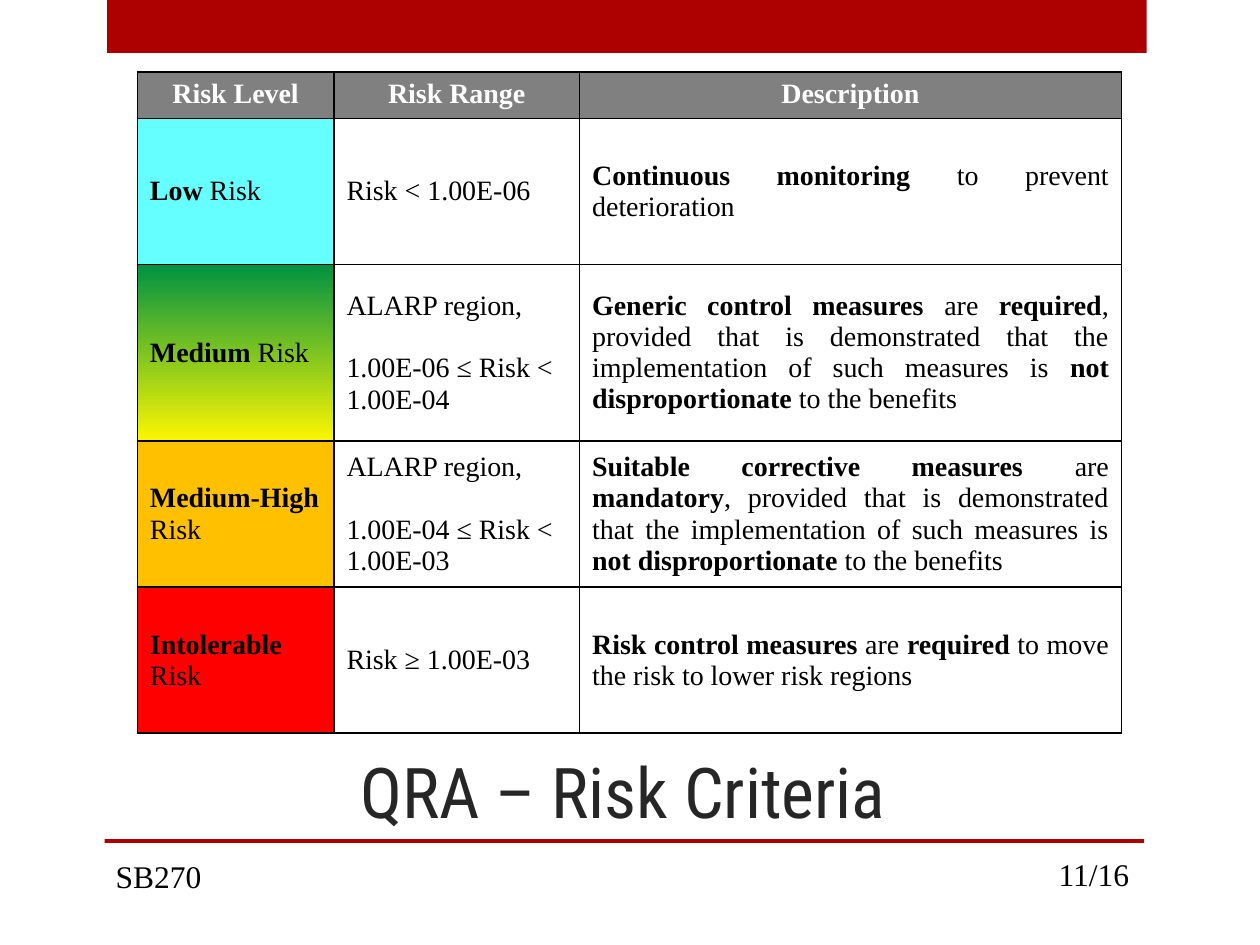
"""Build the risk criteria slide with its table of risk levels."""
from dataclasses import dataclass

import lxml.etree
import pptx
import pptx.dml.color
import pptx.enum.shapes
import pptx.enum.text
import pptx.oxml.ns
import pptx.util
from pptx.util import Inches

COLORS = {
    "accent": "AD0101", "black": "000000", "white": "FFFFFF", "title": "262626",
    "header": "808080", "low": "66FFFF", "medium_top": "009242",
    "medium_bottom": "FCF600", "medium_high": "FFC000", "intolerable": "FF0000",
}
SERIF = "Times New Roman"
ALIGN = pptx.enum.text.PP_ALIGN
ANCHOR = pptx.enum.text.MSO_ANCHOR
COLUMN_WIDTHS = (1.56, 1.95, 4.3)
HEADER_HEIGHT = 0.37
HEADINGS = ("Risk Level", "Risk Range", "Description")


@dataclass(frozen=True)
class RiskLevel:
    """One table row; double asterisks enclose bold words."""
    name: str
    limits: tuple[str, ...]
    description: str
    fills: tuple[str, ...]
    height: float = 1.16


@dataclass(frozen=True)
class Label:
    """A single-line text box."""
    text: str
    box: tuple[float, float, float, float]
    size: int
    font: str = SERIF
    color: str = "black"
    align: ALIGN = ALIGN.LEFT
    anchor: ANCHOR = ANCHOR.TOP


RISK_LEVELS = (
    RiskLevel("**Low** Risk", ("Risk < 1.00E-06",),
              "**Continuous monitoring **to prevent deterioration", ("low",)),
    RiskLevel("**Medium** Risk", ("ALARP region,", "1.00E-06 ≤ Risk < 1.00E-04"),
              "**Generic control measures** are **required**, provided that is demonstrated "
              "that the implementation of such measures is **not disproportionate **"
              "to the benefits", ("medium_top", "medium_bottom"), 1.4),
    RiskLevel("**Medium-High** Risk", ("ALARP region,", "1.00E-04 ≤ Risk < 1.00E-03"),
              "**Suitable corrective measures **are **mandatory**, provided that is "
              "demonstrated that the implementation of such measures is "
              "**not disproportionate **to the benefits", ("medium_high",)),
    RiskLevel("**Intolerable** Risk", ("Risk ≥ 1.00E-03",),
              "**Risk control measures** are **required** to move the risk to lower "
              "risk regions", ("intolerable",)),
)
BARS = ((0.85, 0, 8.25, 0.42), (0.83, 6.66, 8.25, 0.03))
LABELS = (
    Label("SB270", (0.82, 6.75, 0.93, 0.4), 18),
    Label("11/16", (7.96, 6.74, 1.1, 0.4), 18, align=ALIGN.RIGHT),
    Label("QRA – Risk Criteria", (0.83, 5, 8.23, 1.66), 40, "Roboto Condensed",
          "title", ALIGN.CENTER, ANCHOR.BOTTOM),
)


def rgb(name: str) -> pptx.dml.color.RGBColor:
    """Look up a named colour."""
    return pptx.dml.color.RGBColor.from_string(COLORS[name])


def format_font(font, size: int, name: str, color: str, bold: bool = False) -> None:
    """Set the look of a run."""
    font.size = pptx.util.Pt(size)
    font.name = name
    font.bold = bold
    font.color.rgb = rgb(color)


def add_bar(slide, box: tuple[float, ...]) -> None:
    """Draw a plain accent bar."""
    shape = slide.shapes.add_shape(
        pptx.enum.shapes.MSO_SHAPE.RECTANGLE, *map(Inches, box))
    shape.shadow.inherit = False
    shape.fill.solid()
    shape.fill.fore_color.rgb = rgb("accent")
    shape.line.fill.background()


def add_label(slide, label: Label) -> None:
    """Draw a text box."""
    text_frame = slide.shapes.add_textbox(*map(Inches, label.box)).text_frame
    text_frame.word_wrap = True
    text_frame.vertical_anchor = label.anchor
    text_frame.text = label.text
    paragraph = text_frame.paragraphs[0]
    paragraph.alignment = label.align
    format_font(paragraph.runs[0].font, label.size, label.font, label.color)


def set_borders(cell) -> None:
    """Give a cell thin black lines on all sides."""
    properties = cell._tc.get_or_add_tcPr()
    qn = pptx.oxml.ns.qn
    for index, side in enumerate(("a:lnL", "a:lnR", "a:lnT", "a:lnB")):
        line = lxml.etree.Element(qn(side), w=str(pptx.util.Pt(1)))
        fill = lxml.etree.SubElement(line, qn("a:solidFill"))
        lxml.etree.SubElement(fill, qn("a:srgbClr"), val=COLORS["black"])
        properties.insert(index, line)


def set_fill(cell, names: tuple[str, ...]) -> None:
    """Fill a cell with nothing, one colour or a downward gradient."""
    if not names:
        cell.fill.background()
    elif len(names) == 1:
        cell.fill.solid()
        cell.fill.fore_color.rgb = rgb(names[0])
    else:
        cell.fill.gradient()
        cell.fill.gradient_angle = 270
        for stop, name in zip(cell.fill.gradient_stops, names):
            stop.color.rgb = rgb(name)


def fill_cell(cell, lines: tuple[str, ...], align: ALIGN, fills: tuple[str, ...] = (),
              color: str = "black", anchor: ANCHOR = ANCHOR.MIDDLE) -> None:
    """Write marked-up lines into a cell and style it."""
    cell.vertical_anchor = anchor
    for index, line in enumerate(lines):
        if index:
            paragraph = cell.text_frame.add_paragraph()
            paragraph.space_before = pptx.util.Pt(18)
        else:
            paragraph = cell.text_frame.paragraphs[0]
        paragraph.alignment = align
        for part, text in enumerate(line.split("**")):
            if text:
                run = paragraph.add_run()
                run.text = text
                format_font(run.font, 16, SERIF, color, part % 2 == 1)
    set_fill(cell, fills)
    set_borders(cell)


def add_risk_table(slide) -> None:
    """Draw the table of risk levels."""
    heights = (HEADER_HEIGHT, *(level.height for level in RISK_LEVELS))
    table = slide.shapes.add_table(
        len(heights), len(COLUMN_WIDTHS), Inches(1.09), Inches(0.57),
        Inches(sum(COLUMN_WIDTHS)), Inches(sum(heights))).table
    table.horz_banding = False
    for column, width in zip(table.columns, COLUMN_WIDTHS):
        column.width = Inches(width)
    for row, height in zip(table.rows, heights):
        row.height = Inches(height)
    for column, heading in enumerate(HEADINGS):
        fill_cell(table.cell(0, column), (f"**{heading}**",), ALIGN.CENTER,
                  ("header",), "white", ANCHOR.TOP)
    for row, level in enumerate(RISK_LEVELS, 1):
        fill_cell(table.cell(row, 0), (level.name,), ALIGN.LEFT, level.fills)
        fill_cell(table.cell(row, 1), level.limits, ALIGN.LEFT)
        fill_cell(table.cell(row, 2), (level.description,), ALIGN.JUSTIFY)


def main() -> None:
    """Build and save the presentation."""
    presentation = pptx.Presentation()
    presentation.slide_width = Inches(10)
    presentation.slide_height = Inches(7.5)
    slide = presentation.slides.add_slide(presentation.slide_layouts[6])
    for box in BARS:
        add_bar(slide, box)
    add_risk_table(slide)
    for label in LABELS:
        add_label(slide, label)
    presentation.save("out.pptx")


if __name__ == "__main__":
    main()
